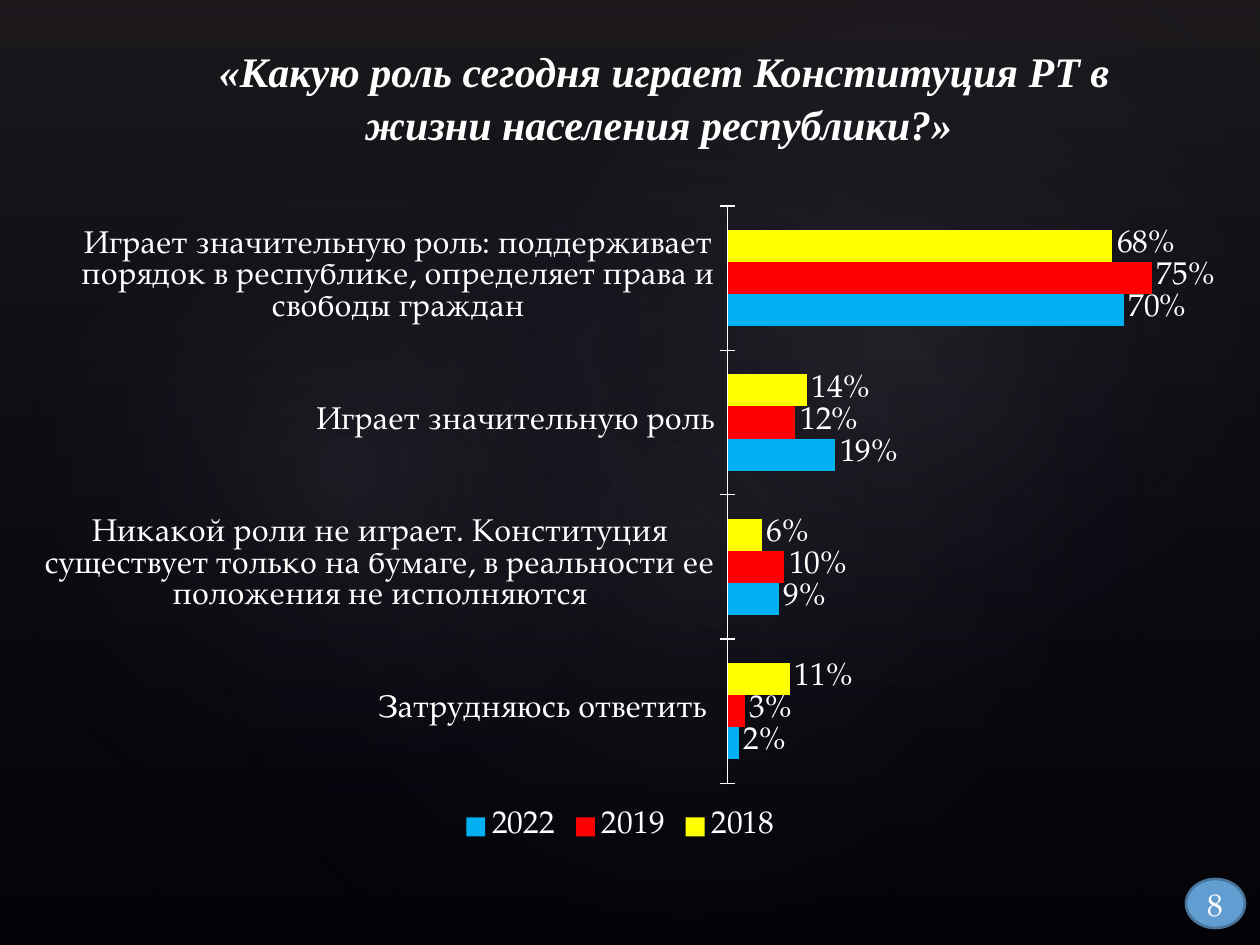
import pptx
import pptx.chart.data
import pptx.dml.color
import pptx.enum.chart
import pptx.enum.shapes
import pptx.enum.text
import pptx.oxml
import pptx.oxml.ns
import pptx.util
from lxml import etree

PX = 914400 / 126
BODY_FONT = "TeX Gyre Pagella"
TITLE_FONT = "Times New Roman"
WHITE = "FFFFFF"
SHAPE = pptx.enum.shapes.MSO_SHAPE
ALIGN = pptx.enum.text.PP_ALIGN
ANCHOR = pptx.enum.text.MSO_ANCHOR

CATEGORIES = [
    "Играет значительную роль: поддерживает порядок в республике, определяет права и свободы граждан",
    "Играет значительную роль",
    "Никакой роли не играет. Конституция существует только на бумаге, в реальности ее положения не исполняются",
    "Затрудняюсь ответить ",
]
# name, colour, values
SERIES = [
    ("2018", "FFFF00", [0.68, 0.14, 0.06, 0.11]),
    ("2019", "FF0000", [0.75, 0.12, 0.10, 0.03]),
    ("2022", "00B0F0", [0.70, 0.19, 0.09, 0.02]),
]
# place, rotation, opacity at the centre in percent
GLOWS = [
    ((189, 144, 998, 786), 328.7, 7),
    ((-38, 161, 764, 617), 294.3, 8),
    ((451, 16, 893, 655), 328.7, 8),
]


def emu(*lengths):
    return [round(length * PX) for length in lengths]


def color(hex_text):
    return pptx.dml.color.RGBColor.from_string(hex_text)


def set_font(font, hex_text, **values):
    for name, value in values.items():
        setattr(font, name, value)
    font.color.rgb = color(hex_text)


def add_plain_shape(page, kind, place):
    shape = page.shapes.add_shape(kind, *emu(*place))
    shape.shadow.inherit = False
    shape.line.fill.background()
    return shape


def set_gradient(shape, stops, direction):
    """Give a gradient of (position, colour, opacity) stops, all in percent."""
    marks = "".join(
        f'<a:gs pos="{place * 1000}"><a:srgbClr val="{tint}">'
        f'<a:alpha val="{opacity * 1000}"/></a:srgbClr></a:gs>'
        for place, tint, opacity in stops)
    gradient = pptx.oxml.parse_xml(
        f'<a:gradFill {pptx.oxml.ns.nsdecls("a")} rotWithShape="1">'
        f'<a:gsLst>{marks}</a:gsLst>{direction}</a:gradFill>')
    shape.fill.background()
    properties = shape._element.spPr
    empty = properties.find(pptx.oxml.ns.qn("a:noFill"))
    properties.replace(empty, gradient)


def add_backdrop(page):
    page.background.fill.solid()
    page.background.fill.fore_color.rgb = color("000000")
    shade = add_plain_shape(page, SHAPE.RECTANGLE, (0, 0, 1260, 945))
    set_gradient(shade, [(0, "504652", 36), (100, "242852", 10)],
                 '<a:lin ang="5400000" scaled="0"/>')
    for place, rotation, opacity in GLOWS:
        glow = add_plain_shape(page, SHAPE.OVAL, place)
        glow.rotation = rotation
        set_gradient(glow, [(0, "C4BCC6", opacity), (58, "242852", 0), (100, "242852", 0)],
                     '<a:path path="circle"><a:fillToRect l="50000" t="50000" '
                     'r="50000" b="50000"/></a:path>')


def write_text(shape, text, anchor, **font_values):
    frame = shape.text_frame
    frame.word_wrap = True
    frame.vertical_anchor = anchor
    para = frame.paragraphs[0]
    para.alignment = ALIGN.CENTER
    span = para.add_run()
    span.text = text
    set_font(span.font, WHITE, **font_values)
    return para


def add_title(page, text):
    box = page.shapes.add_textbox(*emu(144, 0, 1040, 155))
    para = write_text(box, text, ANCHOR.BOTTOM, name=TITLE_FONT,
                      size=pptx.util.Pt(24), bold=True, italic=True)
    para.line_spacing = 1.06


def add_page_number(page, text):
    badge = add_plain_shape(page, SHAPE.OVAL, (1186, 879, 59, 49))
    badge.fill.solid()
    badge.fill.fore_color.rgb = color("629DD1")
    badge.line.color.rgb = color("49749B")
    badge.line.width = pptx.util.Pt(1.5)
    frame = badge.text_frame
    for side in ("left", "right", "top", "bottom"):
        setattr(frame, f"margin_{side}", 0)
    write_text(badge, text, ANCHOR.MIDDLE, name=BODY_FONT, size=pptx.util.Pt(18))


def set_plot_layout(chart, **fractions):
    """Fix the inner plot area as fractions of the chart."""
    plot_area = chart._chartSpace.chart.plotArea
    for old in plot_area.findall(pptx.oxml.ns.qn("c:layout")):
        plot_area.remove(old)
    layout = etree.Element(pptx.oxml.ns.qn("c:layout"))
    manual = etree.SubElement(layout, pptx.oxml.ns.qn("c:manualLayout"))
    settings = {"layoutTarget": "inner", "xMode": "edge", "yMode": "edge", **fractions}
    for name, value in settings.items():
        etree.SubElement(manual, pptx.oxml.ns.qn(f"c:{name}")).set("val", str(value))
    plot_area.insert(0, layout)


def add_bar_chart(page):
    data = pptx.chart.data.CategoryChartData(number_format="0%")
    data.categories = CATEGORIES
    for name, _, values in SERIES:
        data.add_series(name, values)
    kinds = pptx.enum.chart
    chart = page.shapes.add_chart(kinds.XL_CHART_TYPE.BAR_CLUSTERED,
                                  *emu(25, 193, 1191, 656), data).chart
    set_font(chart.font, WHITE, name=BODY_FONT, size=pptx.util.Pt(18))
    chart.has_title = False
    set_plot_layout(chart, x=0.59, y=0.02, w=0.38, h=0.88)

    # Axes
    categories = chart.category_axis
    categories.reverse_order = True
    categories.major_tick_mark = kinds.XL_TICK_MARK.CROSS
    categories.format.line.color.rgb = color(WHITE)
    values = chart.value_axis
    axis_values = {"visible": False, "has_major_gridlines": False,
                   "minimum_scale": 0, "maximum_scale": 0.8}
    for name, value in axis_values.items():
        setattr(values, name, value)
    values.tick_labels.number_format = "0%"
    values.tick_labels.number_format_is_linked = False

    # Legend
    chart.has_legend = True
    chart.legend.position = kinds.XL_LEGEND_POSITION.BOTTOM
    chart.legend.include_in_layout = False

    # Bars and their labels
    plot = chart.plots[0]
    plot.gap_width = 150
    plot.vary_by_categories = False
    label_values = {"show_value": True, "number_format": "0%",
                    "number_format_is_linked": False,
                    "position": kinds.XL_LABEL_POSITION.OUTSIDE_END}
    for series, (_, tint, _) in zip(plot.series, SERIES):
        series.format.fill.solid()
        series.format.fill.fore_color.rgb = color(tint)
        for name, value in label_values.items():
            setattr(series.data_labels, name, value)


def main():
    deck = pptx.Presentation()
    deck.slide_width, deck.slide_height = emu(1260, 945)
    page = deck.slides.add_slide(deck.slide_layouts[6])
    add_backdrop(page)
    add_title(page, "«Какую роль сегодня играет Конституция РТ в жизни населения республики?» ")
    add_page_number(page, "8")
    add_bar_chart(page)
    deck.save("out.pptx")


if __name__ == "__main__":
    main()
